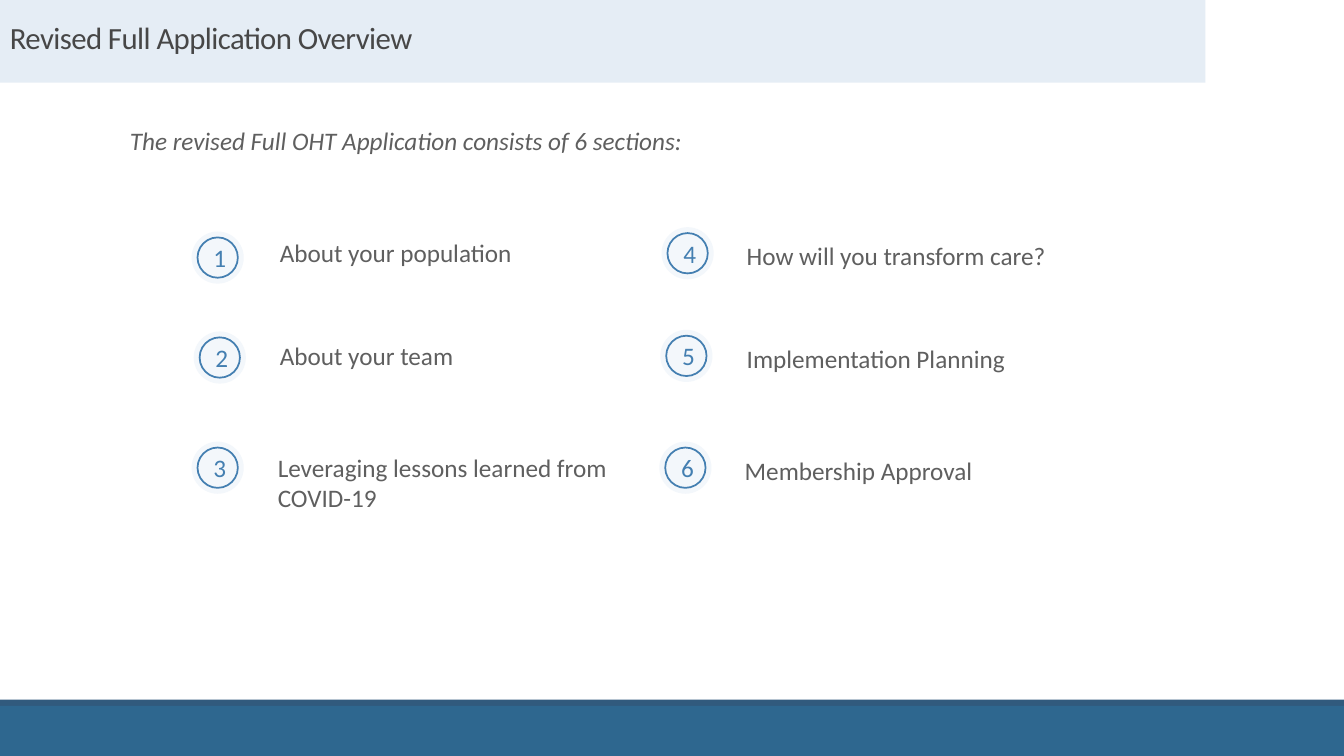
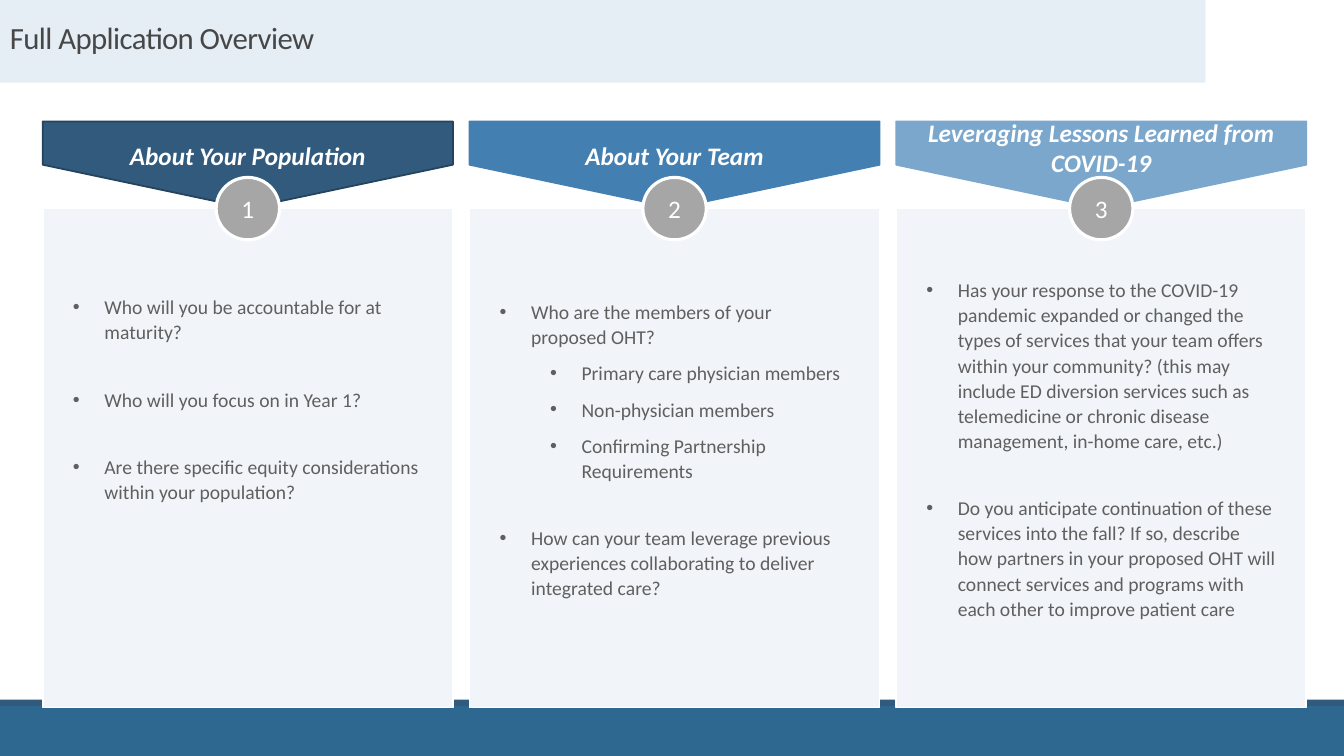
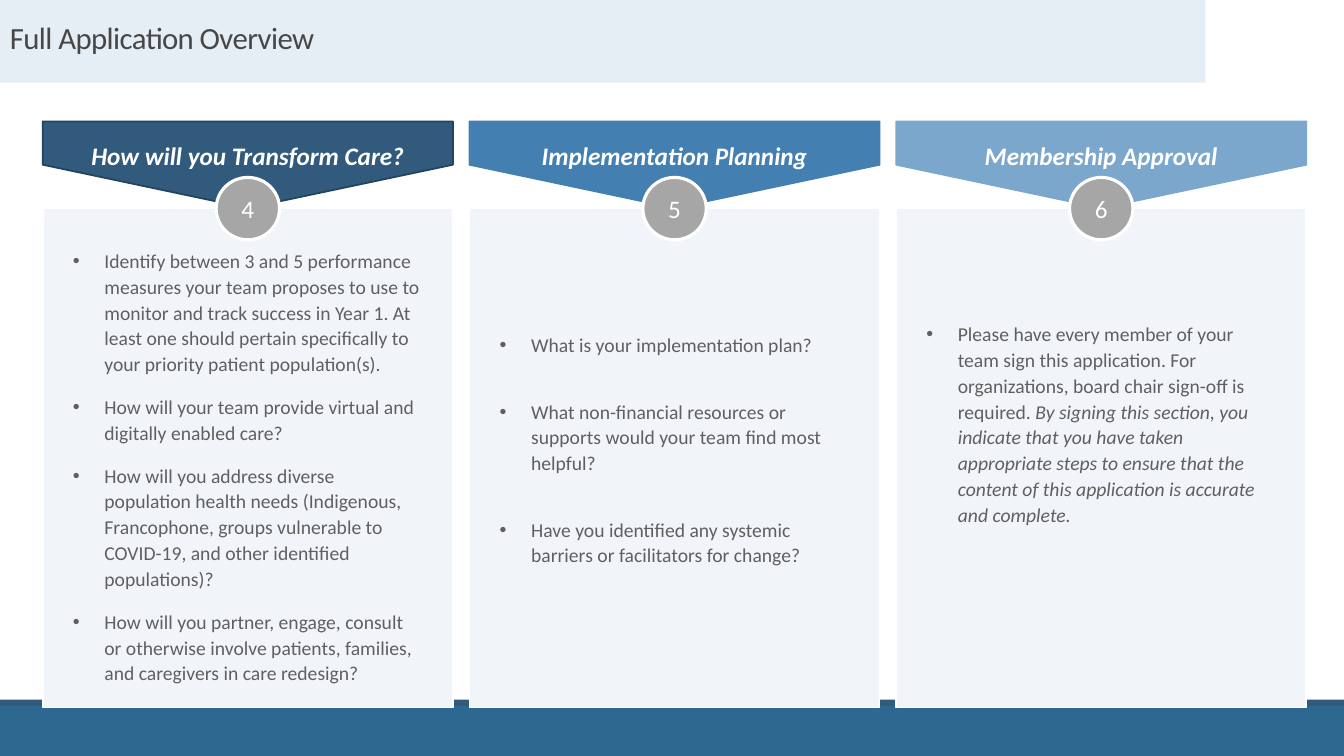
from collections import namedtuple
from lxml.etree import SubElement
from pptx import Presentation
from pptx.dml.color import RGBColor
from pptx.enum.shapes import MSO_SHAPE
from pptx.enum.text import MSO_ANCHOR, PP_ALIGN
from pptx.oxml.ns import qn
from pptx.util import Pt

WHITE = RGBColor(0xFF, 0xFF, 0xFF)
TITLE = RGBColor(0x47, 0x47, 0x47)
TEXT = RGBColor(0x5F, 0x5F, 0x5F)
PALE = RGBColor(0xE5, 0xED, 0xF5)
CARD = RGBColor(0xF1, 0xF5, 0xF9)
HALO = RGBColor(0xF3, 0xF7, 0xFB)
GRAY = RGBColor(0xA6, 0xA6, 0xA6)
NAVY = RGBColor(0x31, 0x5A, 0x7D)
EDGE = RGBColor(0x24, 0x43, 0x5C)
BASE = RGBColor(0x2E, 0x67, 0x8F)
BLUE = RGBColor(0x44, 0x7F, 0xB1)
SKY = RGBColor(0x7B, 0xA7, 0xCC)

WIDE, HIGH = 960, 540
LEFT, PITCH, COL = 30.5, 304.8, 293
TONES = [(NAVY, EDGE), (BLUE, BLUE), (SKY, SKY)]

Item = namedtuple("Item", "text gap level tail", defaults=(0, 0, ""))
Panel = namedtuple("Panel", "head top lines items lift", defaults=(0,))


class Deck:
    font = {"name": "Calibri", "size": Pt(18)}

    def __init__(self):
        self.prs = Presentation()
        self.prs.slide_width, self.prs.slide_height = Pt(WIDE), Pt(HIGH)

    def page(self, title):
        self.slide = self.prs.slides.add_slide(self.prs.slide_layouts[6])
        self.shape(MSO_SHAPE.RECTANGLE, (0, 0, 861, 59), PALE)
        self.shape(MSO_SHAPE.RECTANGLE, (0, 499.7, WIDE, 5), NAVY)
        self.shape(MSO_SHAPE.RECTANGLE, (0, 504.2, WIDE, 35.8), BASE)
        box = self.text(title, (0, 0, 861, 57), size=Pt(22), color=TITLE)
        box.text_frame.vertical_anchor = MSO_ANCHOR.MIDDLE
        para = box.text_frame.paragraphs[0]
        para.line_spacing = 0.85
        para.runs[0].font._element.set("spc", "-40")

    def shape(self, kind, area, fill, line=None, width=1.25):
        shape = self.slide.shapes.add_shape(kind, *map(Pt, area))
        shape.shadow.inherit = False
        shape.fill.solid()
        shape.fill.fore_color.rgb = fill
        if line is None:
            shape.line.fill.background()
        else:
            shape.line.color.rgb = line
            shape.line.width = Pt(width)
        return shape

    def run(self, para, text, color=TEXT, **style):
        run = para.add_run()
        run.text = text
        for key, value in {**self.font, **style}.items():
            setattr(run.font, key, value)
        run.font.color.rgb = color

    def text(self, text, area, **style):
        box = self.slide.shapes.add_textbox(*map(Pt, area))
        box.text_frame.word_wrap = True
        self.run(box.text_frame.paragraphs[0], text, **style)
        return box

    def label(self, shape, text, **style):
        shape.text_frame.vertical_anchor = MSO_ANCHOR.MIDDLE
        para = shape.text_frame.paragraphs[0]
        para.alignment = PP_ALIGN.CENTER
        self.run(para, text, **style)

    def badge(self, number, x, y):
        self.shape(MSO_SHAPE.OVAL, (x, y, 36, 36), HALO, HALO)
        ring = self.shape(MSO_SHAPE.OVAL, (x + 3.6, y + 3.6, 28.8, 28.8), HALO, BLUE)
        self.label(ring, str(number), color=BLUE)

    def banner(self, x, panel, fill, line):
        mid, tall = x + COL / 2, 61.9
        area = (mid - tall / 2, 117.7 - COL / 2, tall, COL)
        flag = self.shape(MSO_SHAPE.PENTAGON, area, fill, line)
        flag.rotation = 90
        head = self.text(panel.head, (x, 88.8 - panel.lift, COL, 44),
                         color=WHITE, bold=True, italic=True)
        frame = head.text_frame
        frame.margin_top = frame.margin_bottom = 0
        frame.vertical_anchor = MSO_ANCHOR.MIDDLE
        frame.paragraphs[0].alignment = PP_ALIGN.CENTER

    def bullet(self, para, item):
        props = para._p.get_or_add_pPr()
        props.set("marL", str(Pt(22.5 + 36 * item.level)))
        props.set("indent", str(Pt(-22.5)))
        SubElement(props, qn("a:buFont")).set("typeface", "Arial")
        SubElement(props, qn("a:buChar")).set("char", "•")
        para.alignment = PP_ALIGN.LEFT
        if item.gap:
            para.space_before = Pt(item.gap)
        self.run(para, item.text, size=Pt(14))
        if item.tail:
            self.run(para, item.tail, size=Pt(14), italic=True)

    def card(self, x, panel):
        card = self.shape(MSO_SHAPE.RECTANGLE, (x, 149, COL, 356.4), CARD, WHITE)
        frame = card.text_frame
        margins = {"left": 21.6, "right": 21.6, "top": panel.top, "bottom": 3.6}
        for side, value in margins.items():
            setattr(frame, "margin_" + side, Pt(value))
        frame.vertical_anchor = MSO_ANCHOR.TOP
        for i, item in enumerate(panel.items):
            para = frame.add_paragraph() if i else frame.paragraphs[0]
            self.bullet(para, item)
            para.line_spacing = panel.lines

    def panels(self, start, panels):
        for i, (panel, tone) in enumerate(zip(panels, TONES)):
            x = LEFT + i * PITCH
            self.banner(x, panel, *tone)
            self.card(x, panel)
            area = (x + COL / 2 - 22.6, 126.7, 45.3, 44.6)
            disc = self.shape(MSO_SHAPE.OVAL, area, GRAY, WHITE, 2.25)
            self.label(disc, str(start + i), color=WHITE)


SECTIONS = [
    ("About your population", (137.5, 166), (192.8, 166.3)),
    ("About your team", (139, 237.4), (192.8, 239.8)),
    ("Leveraging lessons learned from COVID-19", (137.5, 316.1), (191.3, 319.3)),
    ("How will you transform care?", (473.2, 162.9), (526.3, 168.2)),
    ("Implementation Planning", (472.3, 236.2), (526.3, 241.9)),
    ("Membership Approval", (471.6, 316.1), (524.9, 321.4)),
]

FIRST = [
    Panel("About Your Population", 60.7, 1.07, [
        Item("Who will you be accountable for at maturity?"),
        Item("Who will you focus on in Year 1?", 30),
        Item("Are there specific equity considerations within your population?", 30),
    ]),
    Panel("About Your Team", 63.8, 1.07, [
        Item("Who are the members of your proposed OHT?"),
        Item("Primary care physician members", 8, 1),
        Item("Non-physician members", 8, 1),
        Item("Confirming Partnership Requirements", 8, 1),
        Item("How can your team leverage previous experiences collaborating "
             "to deliver integrated care?", 30),
    ]),
    Panel("Leveraging Lessons Learned from COVID-19", 48.4, 1.07, [
        Item("Has your response to the COVID-19 pandemic expanded or changed the "
             "types of services that your team offers within your community? (this "
             "may include ED diversion services such as telemedicine or chronic "
             "disease management, in-home care, etc.)"),
        Item("Do you anticipate continuation of these services into the fall? If so, "
             "describe how partners in your proposed OHT will connect services and "
             "programs with each other to improve patient care", 30),
    ], 5.7),
]

SECOND = [
    Panel("How will you Transform Care?", 27, 1.1, [
        Item("Identify between 3 and 5 performance measures your team proposes to "
             "use to monitor and track success in Year 1. At least one should "
             "pertain specifically to your priority patient population(s)."),
        Item("How will your team provide virtual and digitally enabled care?", 12),
        Item("How will you address diverse population health needs (Indigenous, "
             "Francophone, groups vulnerable to COVID-19, and other identified "
             "populations)?", 12),
        Item("How will you partner, engage, consult or otherwise involve patients, "
             "families, and caregivers in care redesign?", 12),
    ]),
    Panel("Implementation Planning", 87.7, 1.07, [
        Item("What is your implementation plan?"),
        Item("What non-financial resources or supports would your team find most "
             "helpful?", 30),
        Item("Have you identified any systemic barriers or facilitators for change?", 30),
    ]),
    Panel("Membership Approval", 79.2, 1.1, [
        Item("Please have every member of your team sign this application. For "
             "organizations, board chair sign-off is required. ",
             tail="By signing this section, you indicate that you have taken "
                  "appropriate steps to ensure that the content of this application "
                  "is accurate and complete."),
    ]),
]


def main():
    deck = Deck()
    deck.page("Revised Full Application Overview")
    deck.text("The revised Full OHT Application consists of 6 sections:",
              (85.7, 85.7, 775.4, 28.8), italic=True)
    for number, (name, spot, place) in enumerate(SECTIONS, 1):
        width = 252.7 if number < 4 else 365
        deck.text(name, (*place, width, 28.8))
        deck.badge(number, *spot)
    for start, panels in ((1, FIRST), (4, SECOND)):
        deck.page("Full Application Overview")
        deck.panels(start, panels)
    deck.prs.save("out.pptx")


if __name__ == "__main__":
    main()
